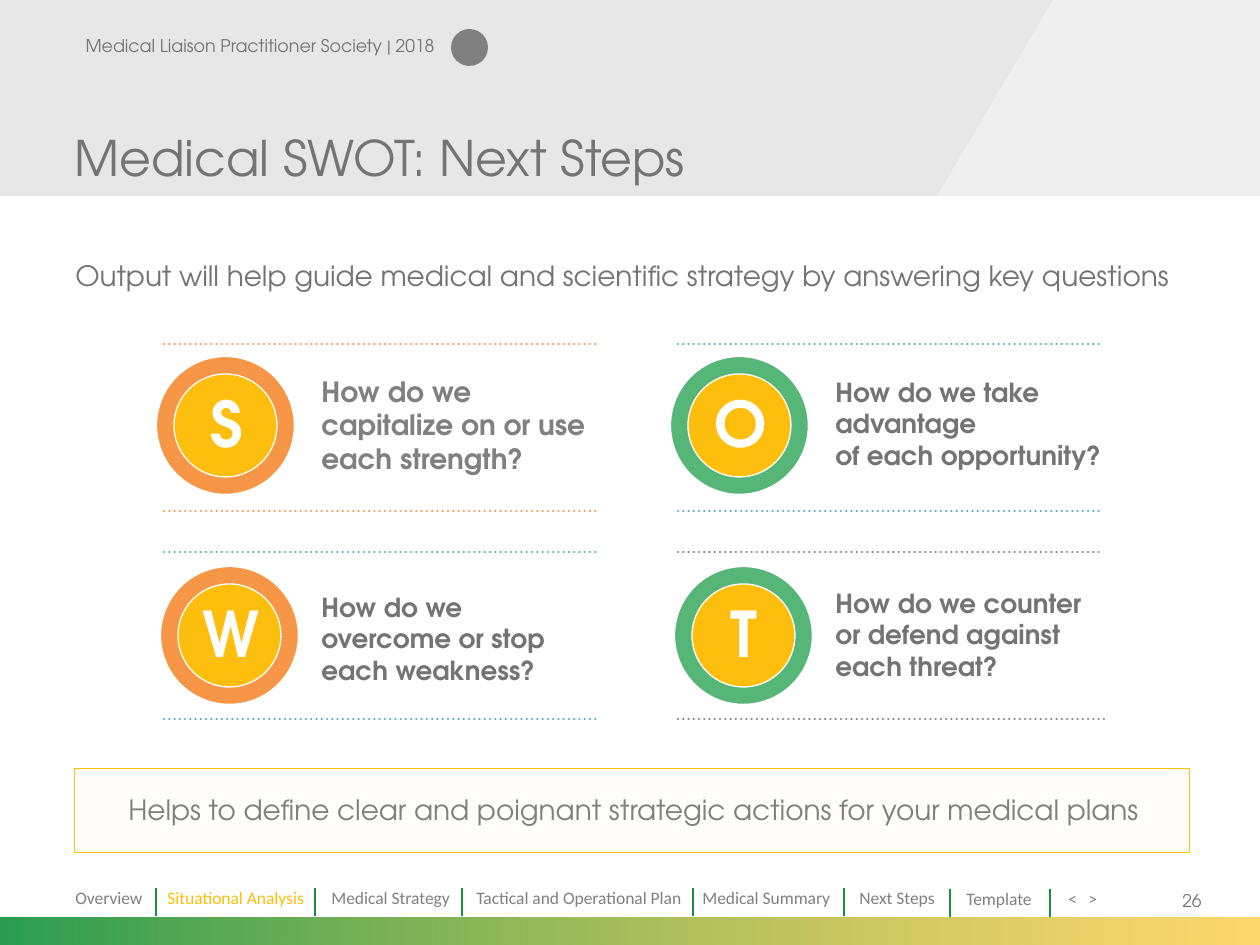
from dataclasses import dataclass

from lxml.etree import SubElement
from pptx import Presentation
from pptx.dml.color import RGBColor
from pptx.enum.dml import MSO_LINE
from pptx.enum.shapes import MSO_CONNECTOR, MSO_SHAPE
from pptx.enum.text import MSO_ANCHOR as Anchor, PP_ALIGN as Align
from pptx.oxml.ns import qn
from pptx.util import Emu, Pt

EMU_PER_PX = 914400 / 126


@dataclass(frozen=True)
class Theme:
    heading_font: str = "TeX Gyre Adventor"
    nav_font: str = "Calibri"
    text: str = "747474"
    grey: str = "808080"
    white: str = "FFFFFF"
    yellow: str = "FEBE0D"
    green: str = "13913F"
    orange: str = "F79646"
    mint: str = "56B677"
    blue: str = "4BACC6"
    band: str = "D9D9D9"
    band_light: str = "F2F2F2"
    cream: str = "FDF1D1"
    title_size: float = 28
    letter_size: float = 36
    body_size: float = 16
    question_size: float = 15
    small_size: float = 10


THEME = Theme()


def px(length):
    return Emu(round(length * EMU_PER_PX))


def rgb(color):
    return RGBColor.from_string(color)


def set_alphas(shape, percents):
    """Make the fill colours of a shape transparent, in their order."""
    for color, percent in zip(shape.element.spPr.iter(qn("a:srgbClr")), percents):
        SubElement(color, qn("a:alpha"), val=str(percent * 1000))


def style_shape(shape, fill, line=None, width=0, alpha=None):
    shape.shadow.inherit = False
    shape.fill.solid()
    shape.fill.fore_color.rgb = rgb(fill)
    if alpha:
        set_alphas(shape, [alpha])
    if line:
        shape.line.color.rgb = rgb(line)
        shape.line.width = Pt(width)
    else:
        shape.line.fill.background()


def add_preset(slide, kind, box, *style, **options):
    shape = slide.shapes.add_shape(kind, *map(px, box))
    style_shape(shape, *style, **options)
    return shape


def add_polygon(slide, points, fill, alpha):
    builder = slide.shapes.build_freeform(*points[0], scale=EMU_PER_PX)
    builder.add_line_segments(points[1:], close=True)
    style_shape(builder.convert_to_shape(), fill, alpha=alpha)


def add_line(slide, start, end, color, width, dash=None):
    line = slide.shapes.add_connector(MSO_CONNECTOR.STRAIGHT, *map(px, start + end))
    line.line.color.rgb = rgb(color)
    line.line.width = Pt(width)
    if dash:
        line.line.dash_style = dash
        line.element.spPr.find(qn("a:ln")).set("cap", "rnd")
    SubElement(line.element.spPr, qn("a:effectLst"))


def write(frame, text, size, color=THEME.text, font=THEME.heading_font,
          bold=False, align=Align.LEFT, anchor=Anchor.TOP, tab=None):
    frame.word_wrap = True
    frame.vertical_anchor = anchor
    paragraph = frame.paragraphs[0]
    paragraph.text = text
    paragraph.alignment = align
    if tab:
        stops = SubElement(paragraph._p.get_or_add_pPr(), qn("a:tabLst"))
        SubElement(stops, qn("a:tab"), pos=str(px(tab)), algn="l")
    formats = {"name": font, "size": Pt(size), "bold": bold}
    for run in paragraph.runs:
        for attribute, value in formats.items():
            setattr(run.font, attribute, value)
        run.font.color.rgb = rgb(color)


def add_text(slide, box, text, size, **options):
    write(slide.shapes.add_textbox(*map(px, box)).text_frame, text, size, **options)


def add_header(slide, width, height):
    add_polygon(slide, [(0, 0), (width, 0), (width, height), (0, height)],
                THEME.band, 62)
    add_polygon(slide, [(1053, 0), (width, 0), (width, height), (937, height)],
                THEME.band_light, 79)
    add_text(slide, (60, 21, 400, 50), "Medical Liaison Practitioner Society | 2018",
             THEME.small_size, align=Align.CENTER, anchor=Anchor.MIDDLE)
    add_preset(slide, MSO_SHAPE.OVAL, (451, 29, 37, 37), THEME.grey)
    title = slide.shapes.title
    title.element.getparent().append(title.element)  # in front of the bands
    title.left, title.top, title.width, title.height = map(px, (62, 0, 945, 193))
    write(title.text_frame, "Medical SWOT: Next Steps", THEME.title_size,
          anchor=Anchor.BOTTOM)


def add_quadrant(slide, left, top, quadrant):
    """Draw a lettered disc and its question between two dotted rules."""
    letter, question, ring, rule, rule_ends, ring_at, letter_at, question_box, font = quadrant
    for y, length in zip((top, top + 167), rule_ends):
        add_line(slide, (left, y), (left + length, y), rule, 1.5, MSO_LINE.ROUND_DOT)
    for inset, color, width in ((0, ring, 2.5), (19, THEME.yellow, 0.75)):
        size = 141 - 2 * inset
        add_preset(slide, MSO_SHAPE.OVAL,
                   (left + ring_at[0] + inset, top + ring_at[1] + inset, size, size),
                   color, THEME.white, width)
    add_text(slide, (left + letter_at[0], top + letter_at[1], 74, 91), letter,
             THEME.letter_size, color=THEME.white, bold=True, align=Align.CENTER)
    y, width = question_box
    size, color = font
    add_text(slide, (left + 145, top + y, width, 110), question, size,
             color=color, bold=True)


def add_swot(slide, left, top):
    upper_ring, lower_ring = (-9, 11), (-5, 13)
    large = (THEME.body_size, THEME.grey)
    normal = (THEME.question_size, THEME.text)
    rows = [
        [("S", "How do we capitalize on or use each strength?", THEME.orange,
          THEME.orange, (433, 433), upper_ring, (26, 34), (24, 291), large),
         ("O", "How do we take advantage\vof each opportunity?", THEME.mint,
          THEME.blue, (422, 422), upper_ring, (24, 34), (26, 318), normal)],
        [("W", "How do we overcome or stop each weakness?", THEME.orange,
          THEME.blue, (433, 433), lower_ring, (26, 36), (33, 270), normal),
         ("T", "How do we counter or defend against each threat?", THEME.mint,
          THEME.grey, (422, 427), lower_ring, (29, 36), (29, 287), normal)],
    ]
    for row, quadrants in enumerate(rows):
        for column, quadrant in enumerate(quadrants):
            add_quadrant(slide, left + column * 514, top + row * 208, quadrant)


def add_conclusion(slide, left, top, width, height):
    add_preset(slide, MSO_SHAPE.RECTANGLE, (left, top, width, height),
               THEME.cream, THEME.yellow, 0.25, alpha=10)
    add_text(slide, (left + 5, top + 18, width - 5, 47),
             "Helps to define clear and poignant strategic actions for your medical plans",
             THEME.body_size, color=THEME.grey, align=Align.CENTER)


def add_navigation(slide, top):
    # label, left, width, divider after it, drop of label, drop of divider
    entries = [
        ("Overview", 63, 107, 156, 0, 0),
        ("Situational Analysis", 155, 166, 315, 0, 0),
        ("Medical Strategy", 319, 147, 462, 0, 0),
        ("Tactical and Operational Plan", 464, 238, 693, 0, 0),
        ("Medical Summary", 690, 158, 844, 0, 0),
        ("Next Steps", 847, 108, 950, 0, 1),
        ("Template", 954, 95, 1050, 1, 1),
        ("<\t>", 1056, 67, None, 1, 0),
    ]
    for label, left, width, divider, drop, divider_drop in entries:
        color = THEME.yellow if label == "Situational Analysis" else THEME.grey
        add_text(slide, (left, top + drop, width, 34), label, THEME.small_size,
                 color=color, font=THEME.nav_font, tab=20 if "\t" in label else None)
        if divider:
            y = top + 7 + divider_drop
            add_line(slide, (divider, y), (divider, y + 28), THEME.green, 1)
    add_text(slide, (1128, top - 5, 86, 50), "26", THEME.small_size,
             align=Align.RIGHT, anchor=Anchor.MIDDLE)


def add_footer_bar(slide, top, width, height):
    bar = add_preset(slide, MSO_SHAPE.RECTANGLE, (0, top, width, height), THEME.green)
    bar.fill.gradient()
    bar.fill.gradient_angle = 0
    for stop, color in zip(bar.fill.gradient_stops, (THEME.green, THEME.yellow)):
        stop.color.rgb = rgb(color)
    set_alphas(bar, (90, 60))


def main():
    presentation = Presentation()
    presentation.slide_width, presentation.slide_height = px(1260), px(945)
    slide = presentation.slides.add_slide(presentation.slide_layouts[5])
    add_header(slide, 1260, 196)
    add_footer_bar(slide, 918, 1260, 27)
    add_text(slide, (63, 252, 1131, 57),
             "Output will help guide medical and scientific strategy by answering key questions",
             THEME.body_size)
    add_swot(slide, 164, 344)
    add_conclusion(slide, 74, 768, 1115, 84)
    add_navigation(slide, 881)
    presentation.save("out.pptx")


if __name__ == "__main__":
    main()
